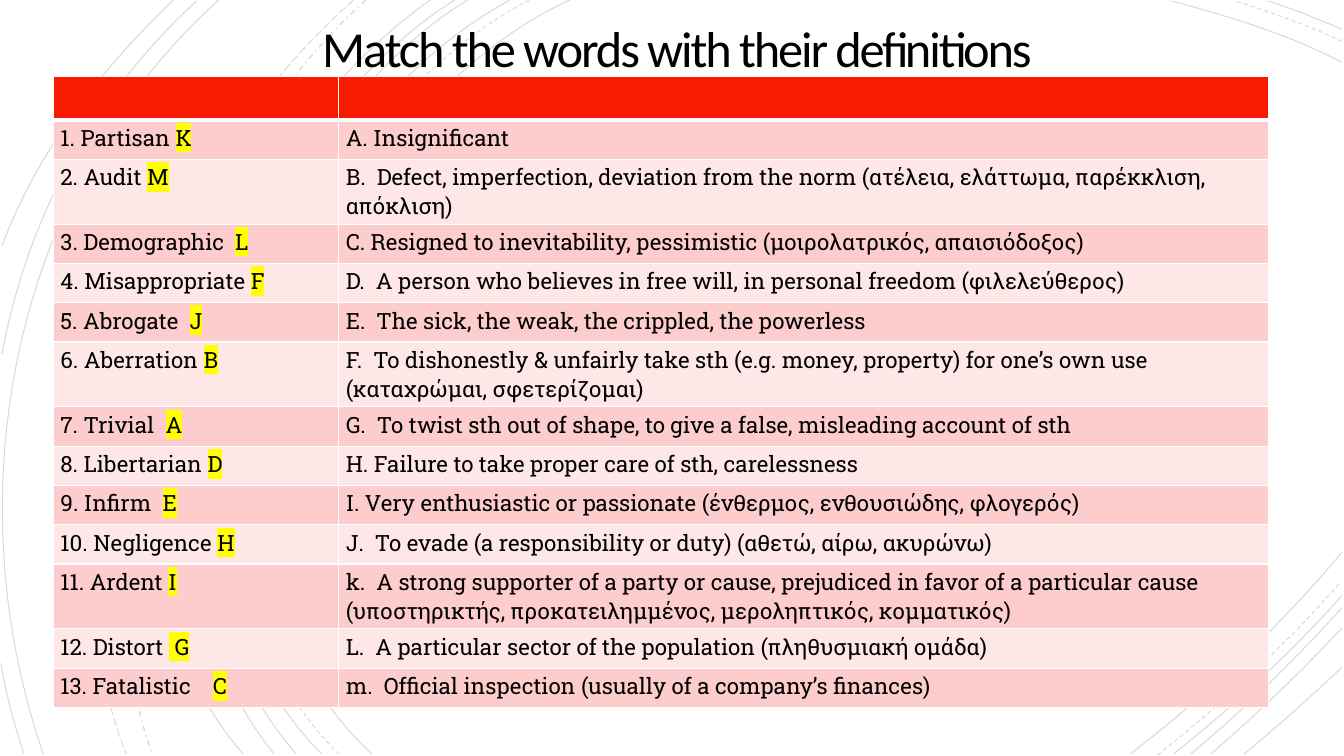
from lxml import etree
from pptx import Presentation
from pptx.dml.color import RGBColor
from pptx.enum.dml import MSO_LINE
from pptx.enum.shapes import MSO_SHAPE
from pptx.enum.text import MSO_ANCHOR, MSO_AUTO_SIZE, PP_ALIGN
from pptx.oxml.ns import qn
from pptx.util import Inches, Pt

SOLID, DASH = MSO_LINE.SOLID, MSO_LINE.DASH
DASH_DOT, LONG_DASH = MSO_LINE.DASH_DOT, MSO_LINE.LONG_DASH
RECTANGLE = MSO_SHAPE.RECTANGLE
MIDDLE, CENTER, NO_FIT = MSO_ANCHOR.MIDDLE, PP_ALIGN.CENTER, MSO_AUTO_SIZE.NONE

COLORS = {
    "paper": "FFFFFF",
    "text": "000000",
    "arc": "000000",
    "header": "F81B02",
    "odd": "FCCDCC",
    "even": "FEE8E7",
    "border": "FFFFFF",
    "mark": "FFFF00",
}
ARC_ALPHA = 15

ARCS = [
    ((5.65, 0), (3.15, 1.15), (1.43, 5.4), (3.69, 7.48), SOLID),
    ((13.31, 0.62), (12.78, 0.34), (12.18, 0.16), (11.62, 0.01), SOLID),
    ((11.21, 7.48), (11.97, 6.9), (12.69, 6.22), (13.31, 5.48), SOLID),
    ((5.25, 0), (2.85, 1.25), (1.23, 5.37), (3.36, 7.48), DASH),
    ((13.31, 0.41), (12.97, 0.25), (12.6, 0.12), (12.25, 0.01), DASH),
    ((11.48, 7.49), (12.13, 6.98), (12.75, 6.4), (13.3, 5.77), DASH),
    ((5.06, 0), (2.7, 1.27), (1.1, 5.37), (3.19, 7.48), SOLID),
    ((13.31, 0.29), (13.07, 0.19), (12.83, 0.09), (12.58, 0.01), SOLID),
    ((11.64, 7.48), (12.23, 7.01), (12.8, 6.48), (13.31, 5.91), SOLID),
    ((4.64, 0), (2.44, 1.33), (1.1, 5.41), (2.94, 7.48), SOLID),
    ((11.81, 7.48), (12.34, 7.04), (12.84, 6.55), (13.31, 6.03), SOLID),
    ((4.51, 0), (2.31, 1.38), (0.97, 5.33), (2.72, 7.48), SOLID),
    ((12.01, 7.48), (12.46, 7.09), (12.9, 6.67), (13.31, 6.23), SOLID),
    ((4.27, 0), (2.17, 1.47), (0.53, 5.29), (2.41, 7.48), SOLID),
    ((12.34, 7.48), (12.67, 7.21), (12.99, 6.92), (13.31, 6.62), SOLID),
    ((3.63, 0), (1.76, 1.66), (0.65, 5.09), (1.51, 7.48), DASH_DOT),
    ((3.51, 0), (1.57, 1.69), (0.29, 4.99), (1.25, 7.48), LONG_DASH),
    ((2.17, 0), (0.11, 1.85), (-0.46, 4.9), (0.43, 7.48), SOLID),
    ((1.95, 0.01), (0.92, 0.96), (0.28, 2.14), (0.02, 3.51), SOLID),
    ((0.01, 6.58), (0.06, 6.89), (0.14, 7.19), (0.24, 7.48), SOLID),
    ((1.72, 0), (1, 0.69), (0.37, 1.5), (0.02, 2.44), SOLID),
]

ROW = 0.39
SPECIAL_ROWS = {0: 0.43, 6: 0.43, 11: 0.64}
ENTRIES = [
    ("1. Partisan ", "Κ", "A. Insignificant"),
    ("2. Audit ", "M", "B.  Defect, imperfection, deviation from the norm "
     "(ατέλεια, ελάττωμα, παρέκκλιση, απόκλιση)"),
    ("3. Demographic  ", "L", "C. Resigned to inevitability, pessimistic "
     "(μοιρολατρικός, απαισιόδοξος)"),
    ("4. Misappropriate ", "F", "D.  A person who believes in free will, "
     "in personal freedom (φιλελεύθερος)"),
    ("5. Abrogate  ", "J", "E.  The sick, the weak, the crippled, the powerless"),
    ("6. Aberration ", "Β", "F.  To dishonestly & unfairly take sth (e.g. money, property) "
     "for one’s own use (καταχρώμαι, σφετερίζομαι)"),
    ("7. Trivial  ", "A", "G.  To twist sth out of shape, to give a false, "
     "misleading account of sth"),
    ("8. Libertarian ", "D", "H. Failure to take proper care of sth, carelessness"),
    ("9. Infirm  ", "E", "I. Very enthusiastic or passionate "
     "(ένθερμος, ενθουσιώδης, φλογερός)"),
    ("10. Negligence ", "H", "J.  To evade (a responsibility or duty) "
     "(αθετώ, αίρω, ακυρώνω)"),
    ("11. Ardent ", "I", "k.  A strong supporter of a party or cause, prejudiced in favor of "
     "a particular cause (υποστηρικτής, προκατειλημμένος, μεροληπτικός, κομματικός)"),
    ("12. Distort ", " G", "L.  A particular sector of the population "
     "(πληθυσμιακή ομάδα)"),
    ("13. Fatalistic    ", "C", "m.  Official inspection (usually of a company’s finances)"),
]


def rgb(name):
    return RGBColor.from_string(COLORS[name])


def add_text(p, text, size=16, font="Roboto Slab", color="text", mark=None, spacing=None):
    r = p.add_run()
    r.text = text
    r.font.size = Pt(size)
    r.font.name = font
    r.font.color.rgb = rgb(color)
    rPr = r.font._element
    if spacing is not None:
        rPr.set("spc", str(round(spacing * 100)))
    if mark:
        highlight = etree.Element(qn("a:highlight"))
        etree.SubElement(highlight, qn("a:srgbClr"), val=COLORS[mark])
        rPr.find(qn("a:solidFill")).addnext(highlight)


def add_paper(slide, left, top, width, height):
    sp = slide.shapes.add_shape(RECTANGLE, *map(Inches, (left, top, width, height)))
    sp.shadow.inherit = False
    sp.fill.solid()
    sp.fill.fore_color.rgb = rgb("paper")
    sp.line.fill.background()


def bend(sp):
    lines = list(sp.element.iter(qn("a:lnTo")))
    curve = etree.Element(qn("a:cubicBezTo"))
    lines[0].addprevious(curve)
    for line in lines:
        curve.append(line[0])
        line.getparent().remove(line)


def add_arcs(slide, left, top):
    shapes = slide.shapes.add_group_shape().shapes
    for *points, dash in ARCS:
        start, *rest = [(Inches(left + x), Inches(top + y)) for x, y in points]
        builder = shapes.build_freeform(*start)
        builder.add_line_segments(rest, close=False)
        sp = builder.convert_to_shape()
        bend(sp)
        sp.shadow.inherit = False
        sp.fill.background()
        sp.line.width = Pt(1 if dash == DASH_DOT else 0.75)
        sp.line.color.rgb = rgb("arc")
        sp.line.dash_style = dash
        color = sp.line._ln.find(qn("a:solidFill"))[0]
        etree.SubElement(color, qn("a:alpha"), val=str(ARC_ALPHA * 1000))


def add_title(slide, left, top, width, height):
    sp = slide.shapes.title
    slide.shapes.element.append(sp.element)
    sp.left, sp.top, sp.width, sp.height = map(Inches, (left, top, width, height))
    tf = sp.text_frame
    tf.word_wrap = True
    tf.auto_size = NO_FIT
    tf.vertical_anchor = MIDDLE
    tf.margin_left = tf.margin_right = tf.margin_top = tf.margin_bottom = Inches(0.25)
    p = tf.paragraphs[0]
    p.alignment = CENTER
    p.line_spacing = 0.85
    add_text(p, "Match the words with their definitions", size=36, font="Calibri", spacing=-1.5)


def style_cell(cell, fill, top=1, bottom=1):
    tcPr = cell._tc.get_or_add_tcPr()
    for side, width in (("L", 1), ("R", 1), ("T", top), ("B", bottom)):
        ln = etree.SubElement(tcPr, qn(f"a:ln{side}"), w=str(Pt(width)))
        line_fill = etree.SubElement(ln, qn("a:solidFill"))
        etree.SubElement(line_fill, qn("a:srgbClr"), val=COLORS["border"])
    cell.fill.solid()
    cell.fill.fore_color.rgb = rgb(fill)
    cell.margin_left = cell.margin_right = Inches(0.07)
    cell.margin_top = cell.margin_bottom = Inches(0.03)


def add_matching_table(slide, left, top, widths, height):
    box = map(Inches, (left, top, sum(widths), height))
    frame = slide.shapes.add_table(len(ENTRIES) + 1, len(widths), *box)
    table = frame.table
    for column, width in zip(table.columns, widths):
        column.width = Inches(width)
    for n, row in enumerate(table.rows):
        row.height = Inches(SPECIAL_ROWS.get(n, ROW))
    frame.height = Inches(height)
    for cell in table.rows[0].cells:
        style_cell(cell, "header", bottom=3)
    for n, (word, answer, definition) in enumerate(ENTRIES, 1):
        word_cell, definition_cell = table.rows[n].cells
        for cell in (word_cell, definition_cell):
            style_cell(cell, "odd" if n % 2 else "even", top=3 if n == 1 else 1)
        p = word_cell.text_frame.paragraphs[0]
        add_text(p, word)
        add_text(p, answer, mark="mark")
        add_text(definition_cell.text_frame.paragraphs[0], definition)


def main():
    prs = Presentation()
    prs.slide_width, prs.slide_height = Inches(13.33), Inches(7.5)
    slide = prs.slides.add_slide(prs.slide_layouts[5])
    add_paper(slide, 0, 0, 13.33, 7.5)
    add_arcs(slide, 0, 0)
    add_title(slide, 1.97, 0.41, 9.49, 0.21)
    add_matching_table(slide, 0.53, 0.76, (2.83, 9.22), 6.15)
    prs.save("out.pptx")


if __name__ == "__main__":
    main()
